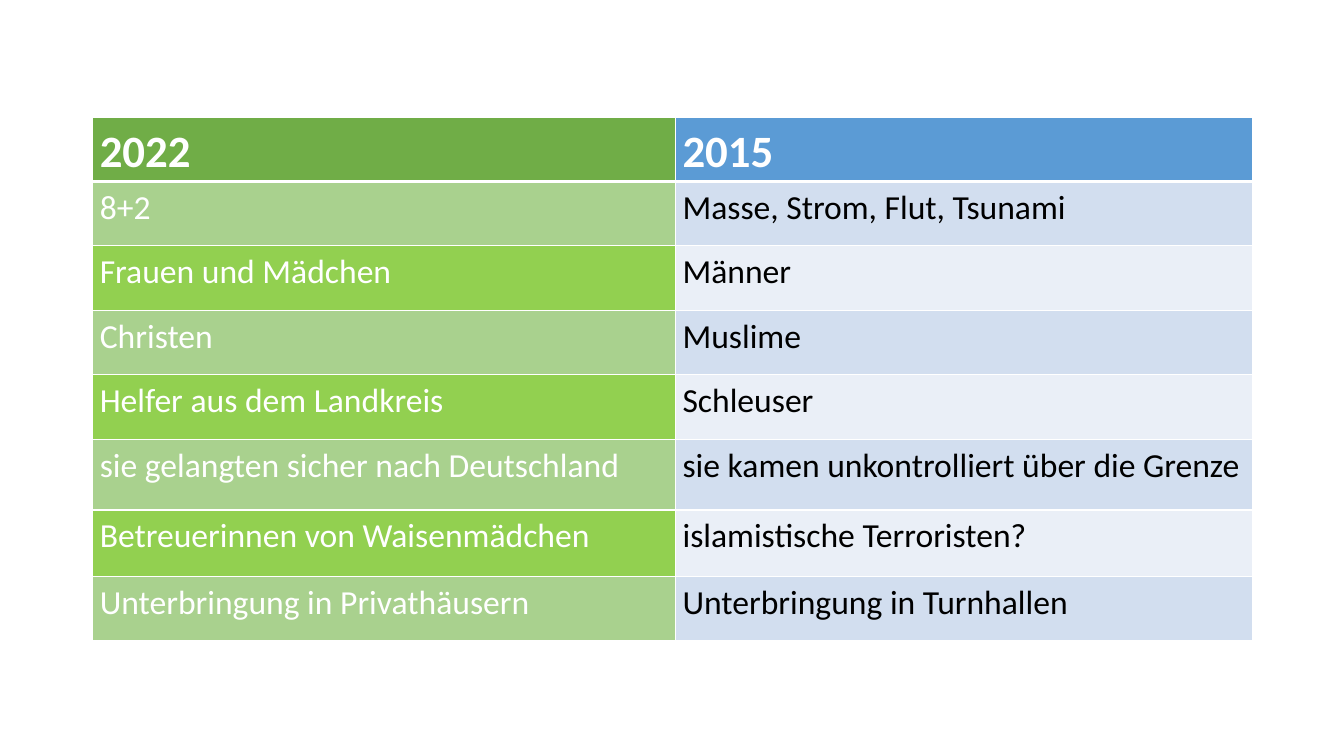
from lxml import etree
from pptx import Presentation
from pptx.dml.color import RGBColor
from pptx.enum import text
from pptx.oxml import ns
from pptx.util import Inches, Pt

HUES = {
    "white": "FFFFFF", "black": "000000",
    "green": "70AD47", "blue": "5B9BD5",
    "sage": "A9D18E", "lime": "92D050",
    "sky": "D2DEEF", "pale": "EAEFF7",
}
ROWS = [
    ("2022", "2015"),
    ("8+2", "Masse, Strom, Flut, Tsunami"),
    ("Frauen und Mädchen", "Männer"),
    ("Christen", "Muslime"),
    ("Helfer aus dem Landkreis", "Schleuser"),
    ("sie gelangten sicher nach Deutschland", "sie kamen unkontrolliert über die Grenze"),
    ("Betreuerinnen von Waisenmädchen", "islamistische Terroristen?"),
    ("Unterbringung in Privathäusern", "Unterbringung in Turnhallen"),
]
WIDTHS = [5.78, 5.72]
HEIGHTS = [0.64] * 5 + [0.7, 0.66, 0.64]
HEAD = ("green", "blue")
BANDS = [("lime", "pale"), ("sage", "sky")]
FORM = {
    "margin_left": Inches(0.07), "margin_right": Inches(0.07),
    "margin_top": 0, "margin_bottom": 0,
    "vertical_anchor": text.MSO_ANCHOR.TOP,
}


def edge(cell, side, width):
    line = etree.SubElement(cell._tc.get_or_add_tcPr(), ns.qn("a:ln" + side), w=str(Pt(width)))
    fill = etree.SubElement(line, ns.qn("a:solidFill"))
    etree.SubElement(fill, ns.qn("a:srgbClr"), val=HUES["white"])


deck = Presentation()
deck.slide_width, deck.slide_height = Inches(13.33), Inches(7.5)
slide = deck.slides.add_slide(deck.slide_layouts[6])
table = slide.shapes.add_table(
    len(ROWS), len(WIDTHS), Inches(0.92), Inches(1.16),
    Inches(sum(WIDTHS)), Inches(sum(HEIGHTS))).table

for col, width in zip(table.columns, WIDTHS):
    col.width = Inches(width)
for row, height in zip(table.rows, HEIGHTS):
    row.height = Inches(height)

for r, words in enumerate(ROWS):
    fills = BANDS[r % 2] if r else HEAD
    for c, word in enumerate(words):
        cell = table.cell(r, c)
        for name, value in FORM.items():
            setattr(cell, name, value)
        for side in "LRTB":
            thick = (r, side) in [(0, "B"), (1, "T")]
            edge(cell, side, 3 if thick else 1)
        cell.fill.solid()
        cell.fill.fore_color.rgb = RGBColor.from_string(HUES[fills[c]])
        para = cell.text_frame.paragraphs[0]
        para.line_spacing = 1.15
        run = para.add_run()
        run.text = word
        look = {"name": "Calibri", "size": Pt(24 if r else 32), "bold": r == 0}
        for name, value in look.items():
            setattr(run.font, name, value)
        ink = "black" if r and c else "white"
        run.font.color.rgb = RGBColor.from_string(HUES[ink])

deck.save("out.pptx")
